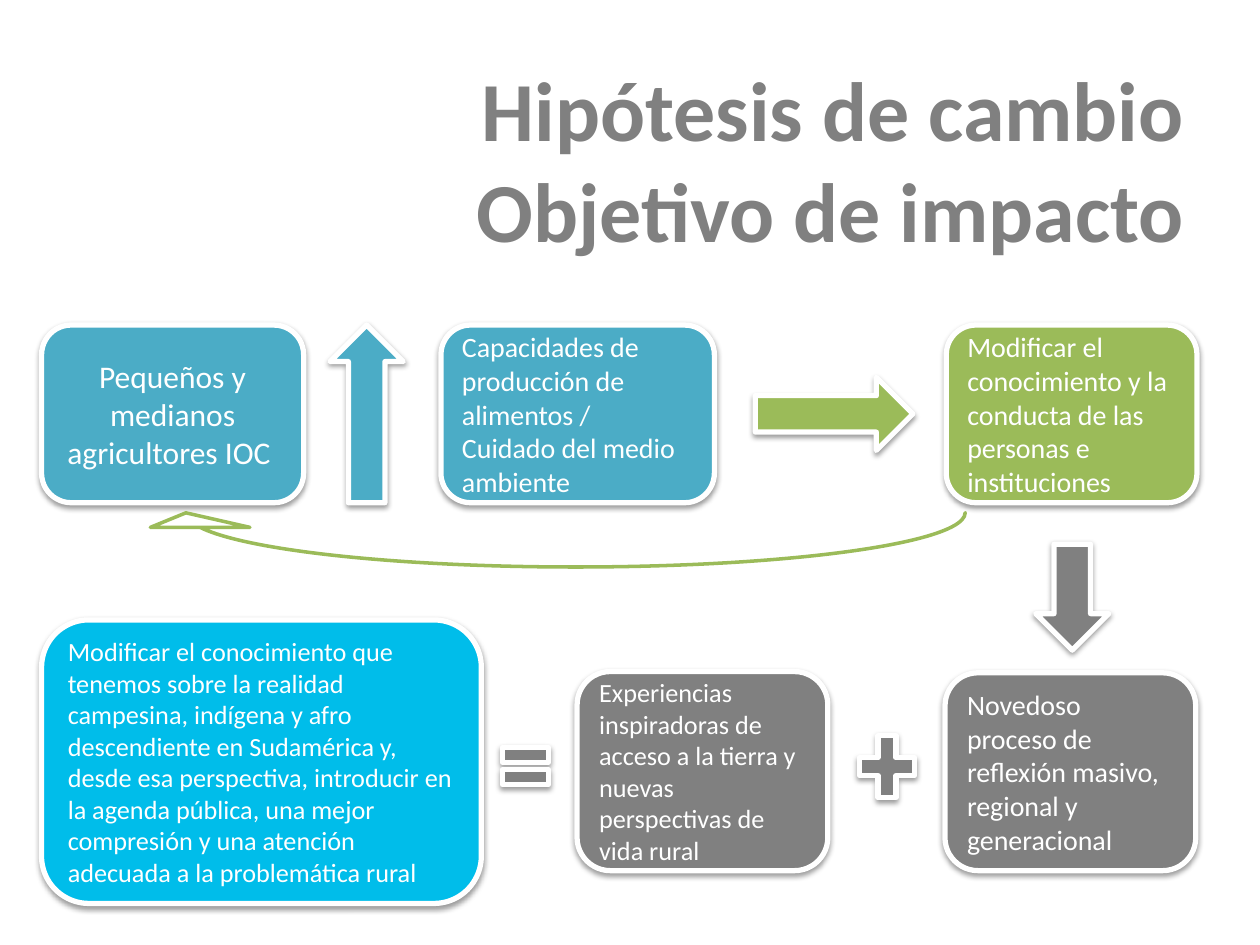
"""Build the slide that links the change hypothesis to the impact objective."""
from dataclasses import dataclass

from lxml import etree
from pptx import Presentation
from pptx.dml.color import RGBColor
from pptx.enum.shapes import MSO_SHAPE
from pptx.enum.text import MSO_ANCHOR, PP_ALIGN
from pptx.oxml.ns import qn
from pptx.util import Inches, Pt

ROUNDED = MSO_SHAPE.ROUNDED_RECTANGLE
UP_ARROW = MSO_SHAPE.UP_ARROW
CURVED_ARROW = MSO_SHAPE.CURVED_DOWN_ARROW
EQUAL = MSO_SHAPE.MATH_EQUAL
PLUS = MSO_SHAPE.MATH_PLUS
MIDDLE = MSO_ANCHOR.MIDDLE
LEFT, CENTER, RIGHT = PP_ALIGN.LEFT, PP_ALIGN.CENTER, PP_ALIGN.RIGHT

FONT = "Calibri"
TITLE_ONLY = 5
COLORS = {
    "white": "FFFFFF",
    "black": "000000",
    "gray": "808080",
    "teal": "4BACC6",
    "green": "9BBB59",
    "cyan": "00BDEA",
}
TOP_ROW, TOP_HEIGHT = 2.58, 1.41


@dataclass
class Box:
    left: float
    top: float
    width: float
    height: float
    color: str
    paragraphs: tuple[str, ...]
    size: int = 16
    alignment: PP_ALIGN = LEFT


@dataclass
class Symbol:
    kind: MSO_SHAPE
    left: float
    top: float
    width: float
    height: float
    color: str
    rotation: int = 0
    line: str = "white"
    line_width: int = 3
    shadow: bool = True
    adjustments: tuple[float, ...] = ()


BOXES = [
    Box(0.33, TOP_ROW, 2.08, TOP_HEIGHT, "teal",
        ("Pequeños y medianos agricultores IOC ",), 18, CENTER),
    Box(3.5, TOP_ROW, 2.17, TOP_HEIGHT, "teal",
        ("Capacidades de producción de alimentos /", "Cuidado del medio ambiente")),
    Box(7.51, TOP_ROW, 1.99, TOP_HEIGHT, "green",
        ("Modificar el conocimiento y la conducta de las personas e instituciones",)),
    Box(7.5, 5.34, 1.99, 1.57, "gray",
        ("Novedoso proceso de reflexión masivo, regional y generacional",)),
    Box(4.58, 5.33, 1.99, 1.58, "gray",
        ("Experiencias inspiradoras de acceso a la tierra y nuevas perspectivas "
         "de vida rural",), 15),
    Box(0.33, 4.92, 3.49, 2.25, "cyan",
        ("Modificar el conocimiento que tenemos sobre la realidad campesina, indígena "
         "y afro descendiente en Sudamérica y, desde esa perspectiva, introducir en la "
         "agenda pública, una mejor compresión y una atención adecuada a la "
         "problemática rural",), 15),
]

SYMBOLS = [
    Symbol(UP_ARROW, 2.62, TOP_ROW, 0.58, TOP_HEIGHT, "teal"),
    Symbol(UP_ARROW, 6.33, 2.66, 0.58, 1.25, "green", rotation=90),
    Symbol(CURVED_ARROW, 1.08, 4.07, 6.58, 0.43, "white", rotation=180, line="green",
           line_width=2, shadow=False, adjustments=(0, 1.838, 0.268)),
    Symbol(UP_ARROW, 8.22, 4.32, 0.58, 0.84, "gray", rotation=180),
    Symbol(EQUAL, 3.92, 5.83, 0.5, 0.5, "gray"),
    Symbol(PLUS, 6.74, 5.75, 0.6, 0.67, "gray"),
]


def rgb(name: str) -> RGBColor:
    """Return a palette color."""
    return RGBColor.from_string(COLORS[name])


def add_shadow(shape) -> None:
    """Add a soft shadow below a shape."""
    effects = shape._element.spPr.find(qn("a:effectLst"))
    shadow = etree.SubElement(
        effects, qn("a:outerShdw"), blurRad=str(Pt(3.1)), dist=str(Pt(1.6)),
        dir="5400000", rotWithShape="0")
    color = etree.SubElement(shadow, qn("a:srgbClr"), val=COLORS["black"])
    etree.SubElement(color, qn("a:alpha"), val="38000")


def add_symbol(slide, symbol: Symbol):
    """Draw a preset shape with its fill, outline and shadow."""
    shape = slide.shapes.add_shape(
        symbol.kind, Inches(symbol.left), Inches(symbol.top),
        Inches(symbol.width), Inches(symbol.height))
    shape.rotation = symbol.rotation
    for index, value in enumerate(symbol.adjustments):
        shape.adjustments[index] = value
    shape.fill.solid()
    shape.fill.fore_color.rgb = rgb(symbol.color)
    shape.line.color.rgb = rgb(symbol.line)
    shape.line.width = Pt(symbol.line_width)
    shape.shadow.inherit = False
    if symbol.shadow:
        add_shadow(shape)
    return shape


def format_paragraph(paragraph, size: int, color: str, alignment: PP_ALIGN) -> None:
    """Set the font and alignment of a paragraph."""
    paragraph.alignment = alignment
    paragraph.font.name = FONT
    paragraph.font.size = Pt(size)
    paragraph.font.color.rgb = rgb(color)


def add_box(slide, box: Box) -> None:
    """Draw a rounded box with its text."""
    shape = add_symbol(
        slide, Symbol(ROUNDED, box.left, box.top, box.width, box.height, box.color))
    frame = shape.text_frame
    frame.word_wrap = True
    frame.vertical_anchor = MIDDLE
    frame.text = "\n".join(box.paragraphs)
    for paragraph in frame.paragraphs:
        format_paragraph(paragraph, box.size, "white", box.alignment)


def add_title(slide, text: str) -> None:
    """Place and format the slide title."""
    title = slide.shapes.title
    title.left, title.top = Inches(1.58), Inches(0.5)
    title.width, title.height = Inches(7.92), Inches(1.52)
    title.text_frame.text = text
    title.text_frame.vertical_anchor = MIDDLE
    paragraph = title.text_frame.paragraphs[0]
    format_paragraph(paragraph, 48, "gray", RIGHT)
    paragraph.font.bold = True


def main() -> None:
    """Create and save the presentation."""
    presentation = Presentation()
    presentation.slide_width, presentation.slide_height = Inches(10), Inches(7.5)
    slide = presentation.slides.add_slide(presentation.slide_layouts[TITLE_ONLY])
    add_title(slide, "Hipótesis de cambio Objetivo de impacto")
    for box in BOXES:
        add_box(slide, box)
    for symbol in SYMBOLS:
        add_symbol(slide, symbol)
    presentation.save("out.pptx")


if __name__ == "__main__":
    main()
